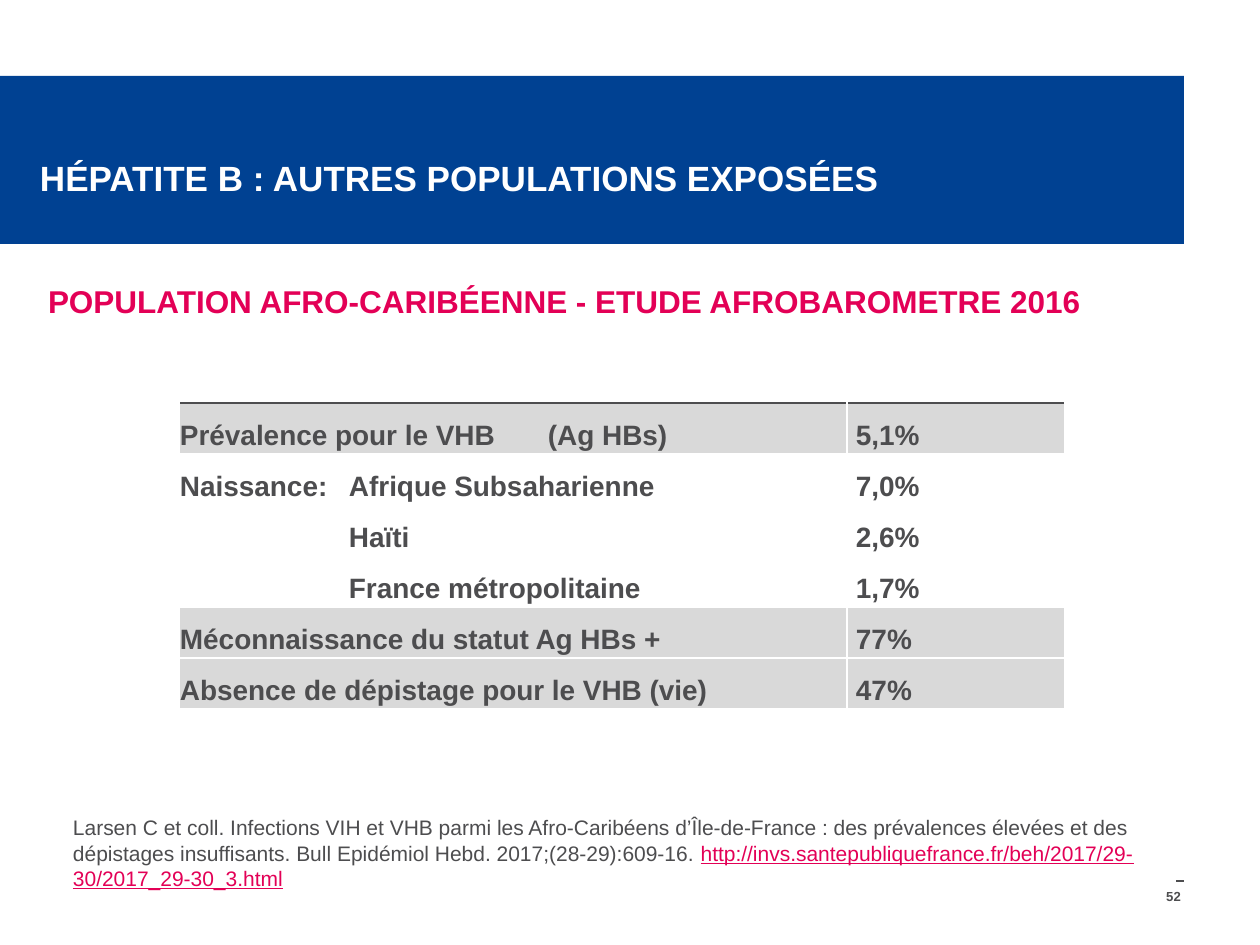
import pptx
import pptx.util
import pptx.dml.color
import pptx.enum.shapes
import pptx.enum.text
import pptx.oxml
import pptx.oxml.ns
from lxml import etree

THEME = {
    "font": "Arial", "blue": "004192", "pink": "E30056", "text": "4D4D4F",
    "grey": "D9D9D9", "white": "FFFFFF",
    "title": 20, "head": 18, "cell": 16, "note": 12, "page": 7.5,
}
TITLE = "HÉPATITE B : AUTRES POPULATIONS EXPOSÉES"
HEAD = "POPULATION AFRO-CARIBÉENNE - ETUDE AFROBAROMETRE 2016"
# label, value, fill, tab stop in px, left indent in px
ROWS = [
    ("Prévalence pour le VHB\t(Ag HBs)", "5,1%", "grey", 368, 0),
    ("Naissance:\tAfrique Subsaharienne", "7,0%", "white", 169, 0),
    ("Haïti", "2,6%", "white", 0, 169),
    ("France métropolitaine", "1,7%", "white", 0, 169),
    ("Méconnaissance du statut Ag HBs +", "77%", "grey", 0, 0),
    ("Absence de dépistage pour le VHB (vie)", "47%", "grey", 0, 0),
]
NOTE = ("Larsen C et coll. Infections VIH et VHB parmi les Afro-Caribéens "
        "d’Île-de-France : des prévalences élevées et des dépistages "
        "insuffisants. Bull Epidémiol Hebd. 2017;(28-29):609-16. ")
LINK = "http://invs.santepubliquefrance.fr/beh/2017/29-30/2017_29-30_3.html"
PAGE = "52"
COLS = (668, 218)
ROW_H = 51

ALIGN = pptx.enum.text.PP_ALIGN
ANCHOR = pptx.enum.text.MSO_ANCHOR
SHAPE = pptx.enum.shapes.MSO_SHAPE


def px(n):
    return pptx.util.Emu(round(n * 914400 / 126))


def tint(name):
    return pptx.dml.color.RGBColor.from_string(THEME[name])


def style(run, size, color, bold=False):
    font = run.font
    font.name, font.size = THEME["font"], pptx.util.Pt(THEME[size])
    font.bold, font.color.rgb = bold, tint(color)


def block(slide, box, fill):
    shape = slide.shapes.add_shape(SHAPE.RECTANGLE, *map(px, box))
    shape.shadow.inherit = False
    shape.fill.solid()
    shape.fill.fore_color.rgb = tint(fill)
    shape.line.fill.background()
    return shape


def inset(frame, side, top=0):
    frame.margin_left = frame.margin_right = px(side)
    frame.margin_top = frame.margin_bottom = px(top)


def label(slide, box, text, size, color, space=1.0, side=5, top=0, wrap=True):
    frame = slide.shapes.add_textbox(*map(px, box)).text_frame
    frame.word_wrap = wrap
    inset(frame, side, top)
    para = frame.paragraphs[0]
    para.text = text
    para.line_spacing = space
    style(para.runs[0], size, color, True)
    return frame


def edge(cell, side, color):
    """Draw a 1 pt border on one side (L, R, T or B) of a cell."""
    props = cell._tc.get_or_add_tcPr()
    line = etree.SubElement(props, pptx.oxml.ns.qn(f"a:ln{side}"), w="12700")
    fill = etree.SubElement(line, pptx.oxml.ns.qn("a:solidFill"))
    etree.SubElement(fill, pptx.oxml.ns.qn("a:srgbClr"), val=THEME[color])


def set_cell(cell, text, fill, side, first, tab=0, indent=0):
    for name in "LRTB":
        edge(cell, name, "text" if first and name == "T" else "white")
    cell.fill.solid()
    cell.fill.fore_color.rgb = tint(fill)
    cell.vertical_anchor = ANCHOR.MIDDLE
    inset(cell, side)
    para = cell.text_frame.paragraphs[0]
    para.text = text
    props = para._p.get_or_add_pPr()
    if tab:
        stops = etree.SubElement(props, pptx.oxml.ns.qn("a:tabLst"))
        etree.SubElement(stops, pptx.oxml.ns.qn("a:tab"),
                         pos=str(px(tab)), algn="l")
    if indent:
        props.set("marL", str(px(indent)))
        props.set("indent", "0")
    para.line_spacing = 1.5
    for run in para.runs:
        style(run, "cell", "text", True)


def add_rates(slide):
    size = (sum(COLS), ROW_H * len(ROWS))
    table = slide.shapes.add_table(
        len(ROWS), len(COLS), px(179), px(403), *map(px, size)).table
    table.first_row = table.horz_banding = False
    for col, width in zip(table.columns, COLS):
        col.width = px(width)
    for i, (name, value, fill, tab, indent) in enumerate(ROWS):
        table.rows[i].height = px(ROW_H)
        set_cell(table.cell(i, 0), name, fill, 1, i == 0, tab, indent)
        set_cell(table.cell(i, 1), value, fill, 9, i == 0)


def add_rule(slide):
    rule = slide.shapes.add_connector(
        pptx.enum.shapes.MSO_CONNECTOR.STRAIGHT,
        px(73), px(881), px(1184), px(881))
    rule.line.color.rgb = tint("text")
    rule.line.width = pptx.util.Pt(0.75)
    etree.SubElement(rule._element.spPr, pptx.oxml.ns.qn("a:effectLst"))


def add_note(slide):
    frame = block(slide, (68, 815, 1108, 77), "white").text_frame
    frame.word_wrap = True
    frame.vertical_anchor = ANCHOR.TOP
    inset(frame, 5)
    para = frame.paragraphs[0]
    para.text = NOTE
    para.alignment = ALIGN.LEFT
    style(para.runs[0], "note", "text")
    link = para.add_run()
    link.text = LINK
    style(link, "note", "pink")
    link.font.underline = True


def main():
    deck = pptx.Presentation()
    deck.slide_width, deck.slide_height = px(1260), px(945)
    slide = deck.slides.add_slide(deck.slide_layouts[6])
    block(slide, (0, 76, 1184, 168), "blue")
    add_rule(slide)
    page = label(slide, (1152, 888, 34, 16), PAGE, "page", "text", wrap=False)
    page.paragraphs[0].alignment = ALIGN.RIGHT
    title = label(slide, (35, 103, 942, 129), TITLE, "title", "white", 1.5)
    title.vertical_anchor = ANCHOR.MIDDLE
    label(slide, (35, 272, 1142, 54), HEAD, "head", "pink", 1.1, 13, 6)
    add_rates(slide)
    add_note(slide)
    deck.save("out.pptx")


if __name__ == "__main__":
    main()
